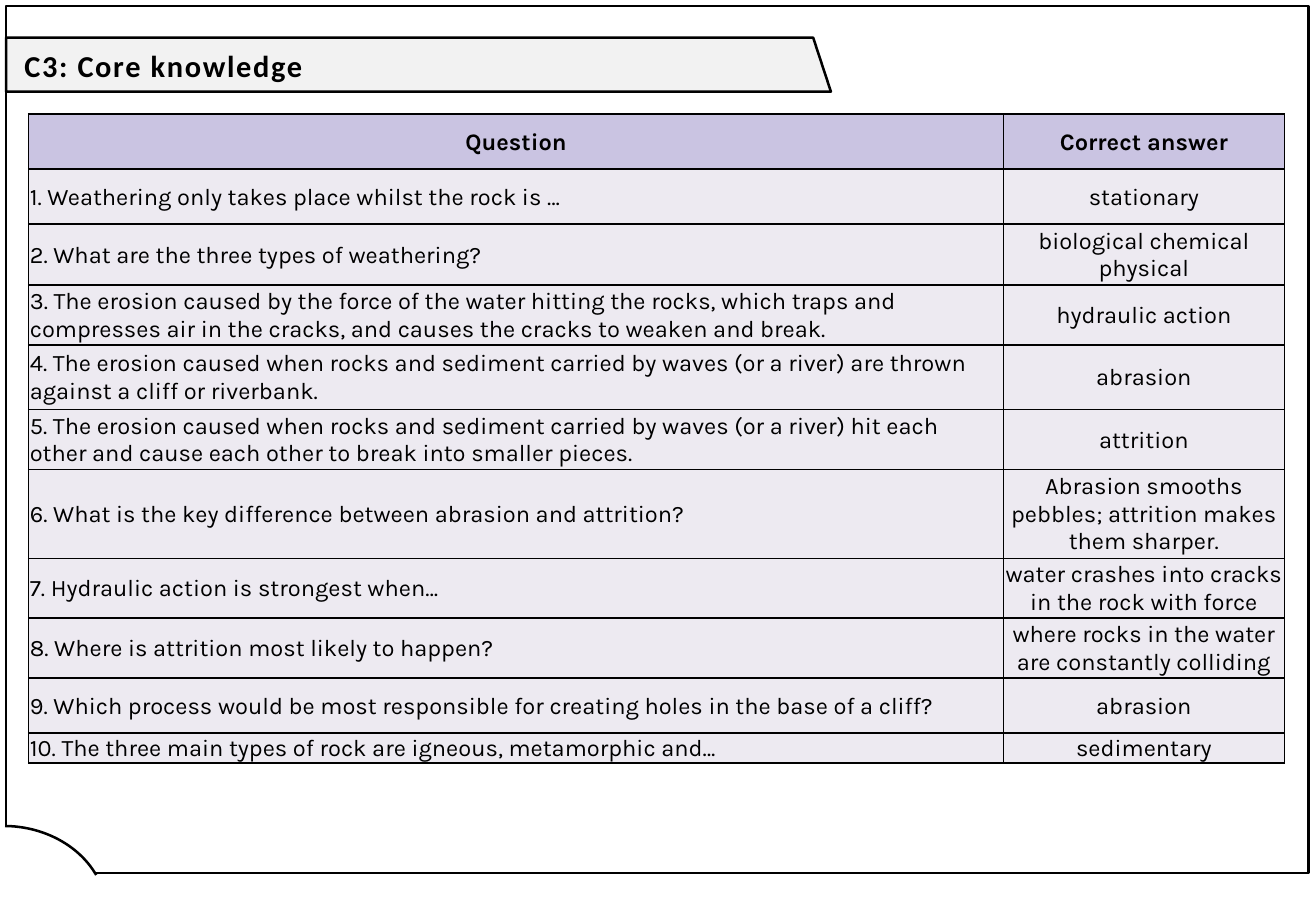
from dataclasses import dataclass

from lxml import etree
from pptx import Presentation
from pptx.dml.color import RGBColor
from pptx.enum.shapes import MSO_SHAPE
from pptx.enum.text import MSO_ANCHOR, MSO_AUTO_SIZE, PP_ALIGN
from pptx.oxml.ns import qn
from pptx.util import Pt

ARC, RECT = MSO_SHAPE.ARC, MSO_SHAPE.RECTANGLE
MIDDLE, NO_FIT = MSO_ANCHOR.MIDDLE, MSO_AUTO_SIZE.NONE
LEFT, CENTER = PP_ALIGN.LEFT, PP_ALIGN.CENTER


@dataclass(frozen=True)
class Theme:
    ink: str = "000000"
    paper: str = "FFFFFF"
    band: str = "F2F2F2"
    head: str = "CAC4E2"
    body: str = "EDEAF1"
    title_font: str = "Calibri"
    table_font: str = "Karla"
    title_size: float = 18
    table_size: float = 14
    line: float = 1.5
    border: float = 1


THEME = Theme()

TITLE = "C3: Core knowledge"
COLS = (577.8, 166.5)
# Row height, question, answer
ROWS = (
    (32.6, "Question", "Correct answer"),
    (32.6, "1. Weathering only takes place whilst the rock is …", "stationary"),
    (36, "2. What are the three types of weathering?",
     "biological chemical physical"),
    (35.5, "3. The erosion caused by the force of the water hitting the rocks, "
     "which traps and compresses air in the cracks, and causes the cracks to "
     "weaken and break.", "hydraulic action"),
    (38.5, "4. The erosion caused when rocks and sediment carried by waves "
     "(or a river) are thrown against a cliff or riverbank.", "abrasion"),
    (35.5, "5. The erosion caused when rocks and sediment carried by waves "
     "(or a river) hit each other and cause each other to break into smaller "
     "pieces.", "attrition"),
    (52.6, "6. What is the key difference between abrasion and attrition?",
     "Abrasion smooths pebbles; attrition makes them sharper."),
    (35.5, "7. Hydraulic action is strongest when…",
     "water crashes into cracks in the rock with force"),
    (35.5, "8. Where is attrition most likely to happen?",
     "where rocks in the water are constantly colliding"),
    (32.6, "9. Which process would be most responsible for creating holes in "
     "the base of a cliff?", "abrasion"),
    (17.8, "10. The three main types of rock are igneous, metamorphic and…",
     "sedimentary"),
)


def rgb(code):
    return RGBColor.from_string(code)


def apply(item, form):
    for name, value in form.items():
        setattr(item, name, value)


def write(frame, text, font, size, bold, form):
    frame.text = text
    para = frame.paragraphs[0]
    apply(para, form)
    run = para.runs[0]
    apply(run.font, {"name": font, "size": Pt(size), "bold": bold})
    run.font.color.rgb = rgb(THEME.ink)
    return run


def paint(shape, fill=None):
    shape.shadow.inherit = False
    if fill:
        shape.fill.solid()
        shape.fill.fore_color.rgb = rgb(fill)
    else:
        shape.fill.background()
    shape.line.color.rgb = rgb(THEME.ink)
    shape.line.width = Pt(THEME.line)


def add_band(slide):
    pen = slide.shapes.build_freeform(Pt(3.6), Pt(22.3))
    corners = ((482, 22.3), (492.5, 54.3), (3.6, 54.3))
    pen.add_line_segments([(Pt(x), Pt(y)) for x, y in corners], close=True)
    paint(pen.convert_to_shape(), THEME.band)


def add_shape(slide, kind, box, fill=None):
    shape = slide.shapes.add_shape(kind, *map(Pt, box))
    paint(shape, fill)
    return shape


def set_title(slide):
    title = slide.shapes.title
    apply(title, {"left": Pt(7.2), "top": Pt(15.1),
                  "width": Pt(463), "height": Pt(45.4)})
    frame = title.text_frame
    apply(frame, {"vertical_anchor": MIDDLE, "word_wrap": True,
                  "auto_size": NO_FIT})
    run = write(frame, TITLE, THEME.title_font, THEME.title_size, True,
                {"alignment": LEFT, "line_spacing": 1.07,
                 "space_before": Pt(0), "space_after": Pt(8)})
    run.font.element.set("spc", "100") if hasattr(run.font, "element") else \
        run.font._element.set("spc", "100")
    # Bring the heading in front of its band
    slide.shapes.element.append(title.element)


def add_border(cell):
    props = cell._tc.get_or_add_tcPr()
    for side in ("lnL", "lnR", "lnT", "lnB"):
        line = etree.SubElement(props, qn("a:" + side),
                                w=str(Pt(THEME.border)))
        fill = etree.SubElement(line, qn("a:solidFill"))
        etree.SubElement(fill, qn("a:srgbClr"), val=THEME.ink)


def fill_cell(cell, text, head, align):
    apply(cell, {"vertical_anchor": MIDDLE, "margin_left": Pt(0.7),
                 "margin_right": Pt(0.7), "margin_top": Pt(0.7),
                 "margin_bottom": Pt(0)})
    add_border(cell)
    cell.fill.solid()
    cell.fill.fore_color.rgb = rgb(THEME.head if head else THEME.body)
    write(cell.text_frame, text, THEME.table_font, THEME.table_size, head,
          {"alignment": align})


def add_table(slide):
    high = sum(row[0] for row in ROWS)
    box = (17, 67.7, sum(COLS), high)
    table = slide.shapes.add_table(len(ROWS), len(COLS), *map(Pt, box)).table
    table.horz_banding = False
    for col, width in zip(table.columns, COLS):
        col.width = Pt(width)
    for r, (height, *texts) in enumerate(ROWS):
        table.rows[r].height = Pt(height)
        for c, text in enumerate(texts):
            align = LEFT if r and c == 0 else CENTER
            fill_cell(table.cell(r, c), text, r == 0, align)


def main():
    deck = Presentation()
    apply(deck, {"slide_width": Pt(780), "slide_height": Pt(540)})
    slide = deck.slides.add_slide(deck.slide_layouts[5])

    # Page frame with a rounded cut in the lower left corner
    add_band(slide)
    add_shape(slide, RECT, (3.6, 3.6, 772, 514))
    curve = add_shape(slide, ARC, (-59, 489.6, 122.4, 104.4), THEME.paper)
    curve.adjustments[0] = 162.53
    curve.adjustments[1] = 202.27

    # Heading and questions
    set_title(slide)
    add_table(slide)
    deck.save("out.pptx")


if __name__ == "__main__":
    main()
